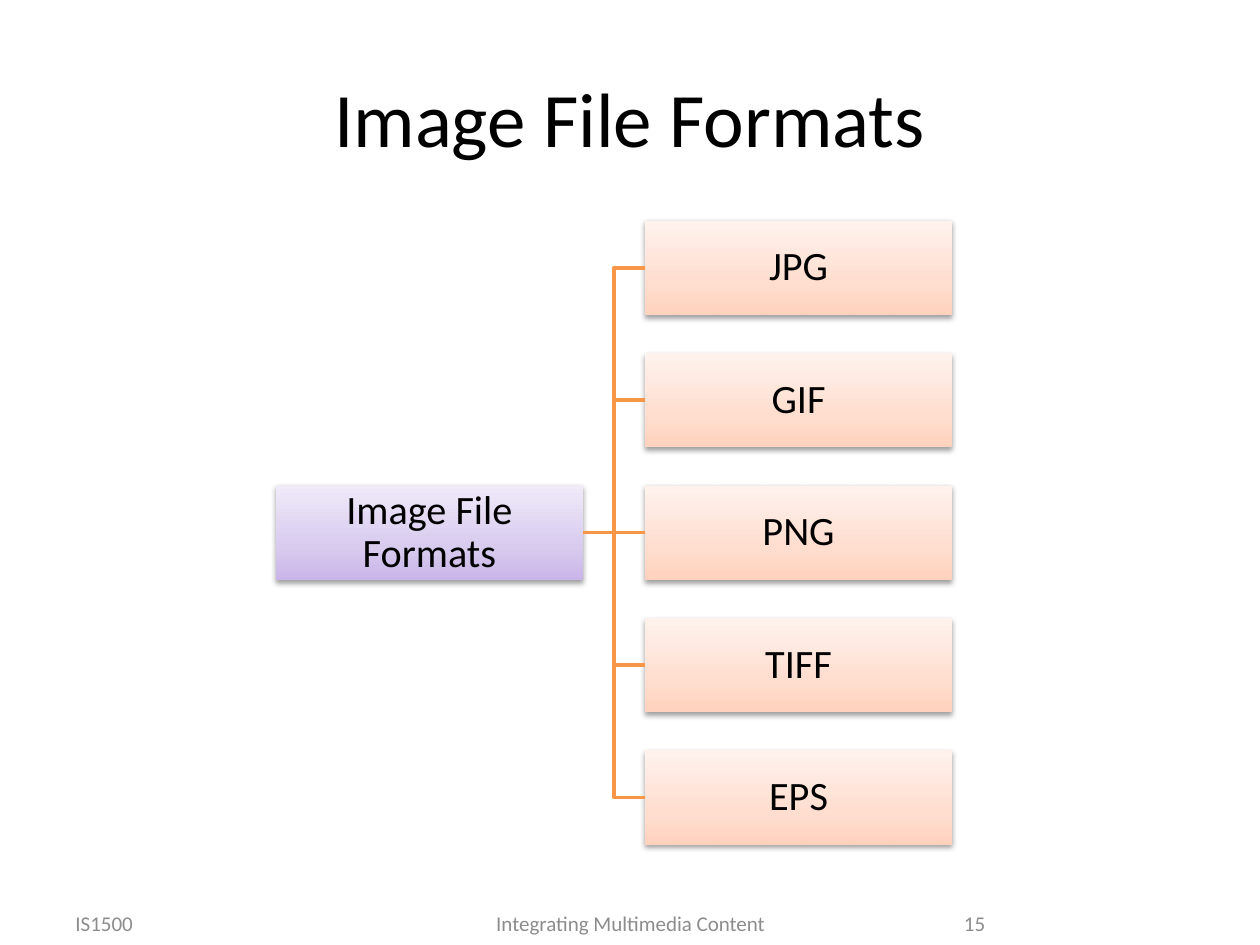
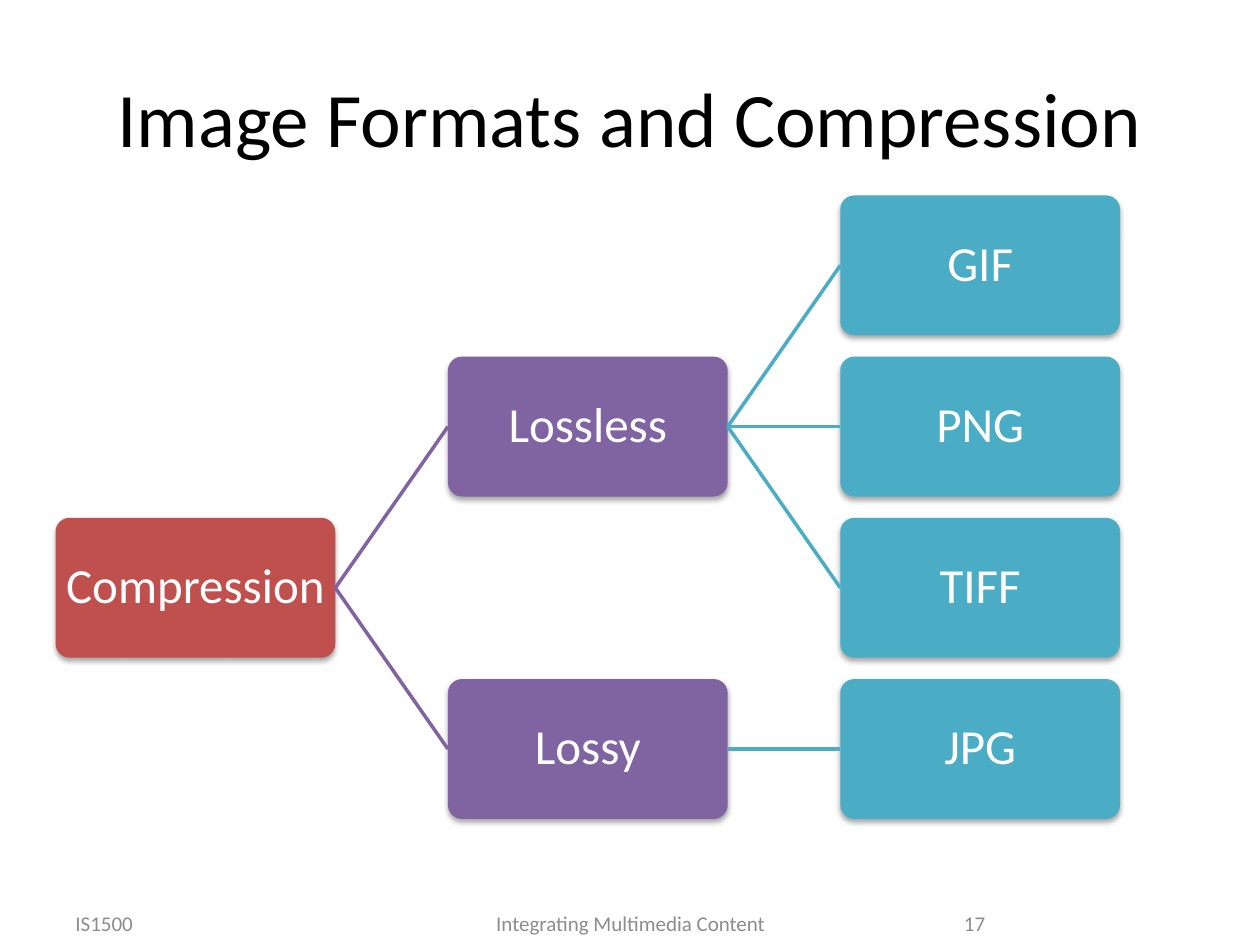
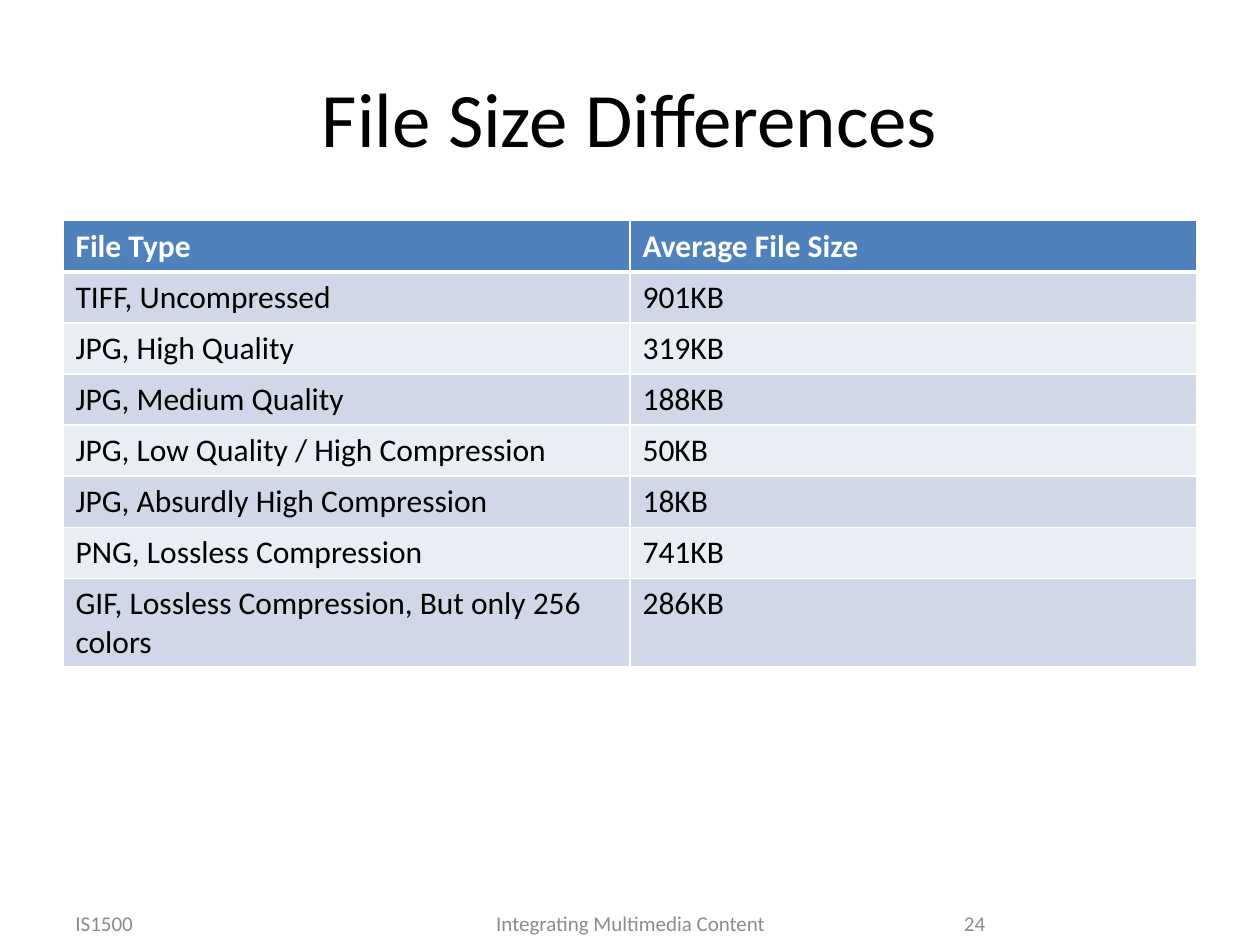
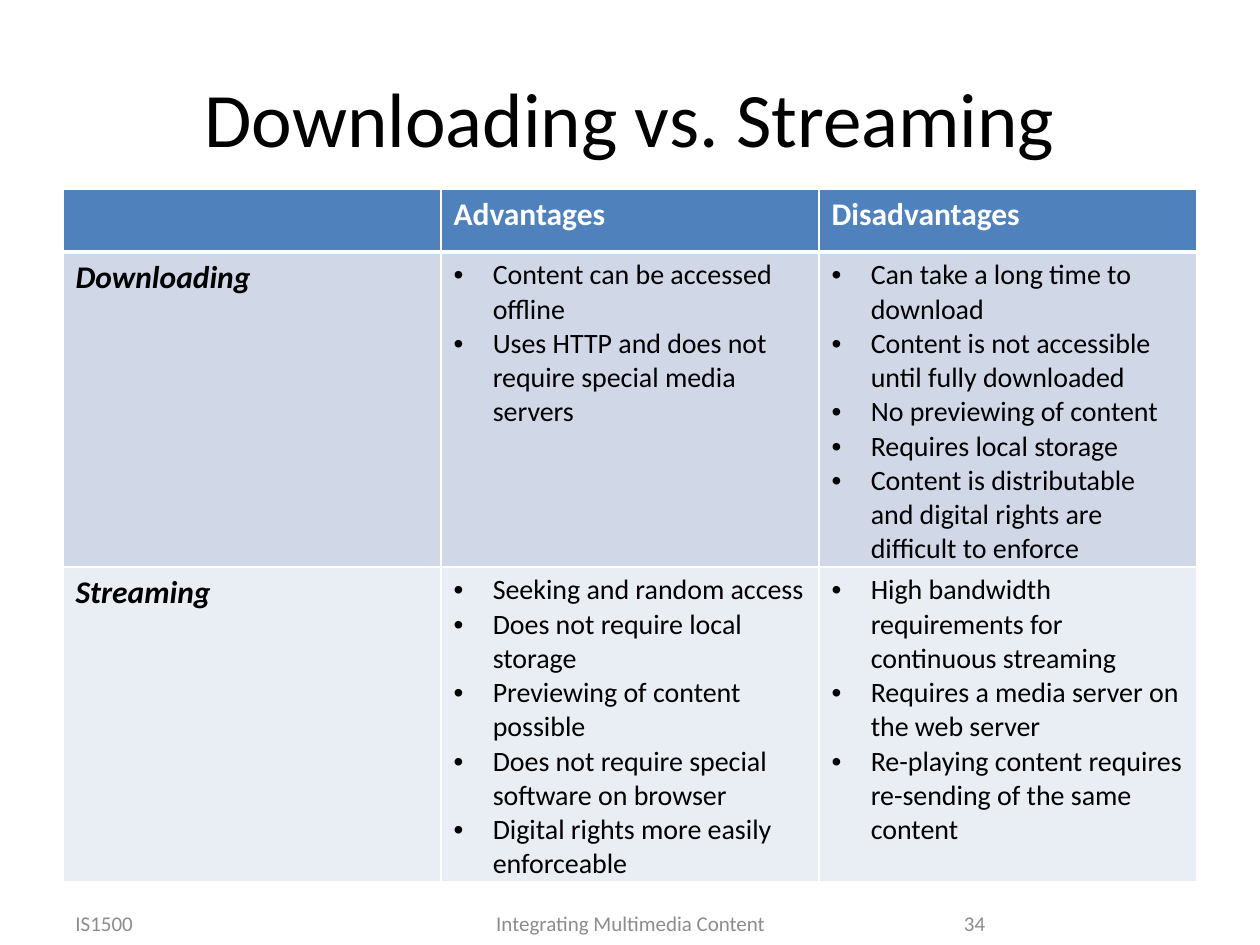
"""Build four slides on image formats, file sizes and media delivery."""
import pptx
import pptx.dml.color
import pptx.enum.shapes
import pptx.enum.text
import pptx.oxml
import pptx.oxml.ns
import pptx.util
from lxml import etree

Cm, Pt = pptx.util.Cm, pptx.util.Pt
SHAPE = pptx.enum.shapes.MSO_SHAPE
LINE = pptx.enum.shapes.MSO_CONNECTOR
ALIGN = pptx.enum.text.PP_ALIGN
ANCHOR = pptx.enum.text.MSO_ANCHOR
qn = pptx.oxml.ns.qn
NS = pptx.oxml.ns.nsdecls("a")

COLORS = {
    "black": "000000", "white": "FFFFFF", "gray": "8C8C8C", "orange": "F79646",
    "red": "C0504D", "purple": "8064A2", "teal": "4BACC6",
    "header": "4F81BD", "band_dark": "D0D8E8", "band_light": "E9EDF4",
}
GRADIENTS = {
    "lilac": [(0, "C9B5E8"), (35, "D8CBEE"), (100, "F0EAF9")],
    "peach": [(0, "FFD2BD"), (35, "FFDED0"), (100, "FFF2ED")],
}
TITLE = {"at": (1.27, 0.76, 22.86, 3.18), "size": 44, "color": "black", "align": ALIGN.CENTER}
FOOTERS = [
    {"at": (1.27, 18.21, 5.92, 0.79), "align": ALIGN.LEFT},
    {"at": (8.69, 18.21, 8.05, 0.79), "align": ALIGN.CENTER},
    {"at": (18.21, 18.21, 1.9, 0.79), "align": ALIGN.RIGHT},
]
FOOTER_TEXTS = ["IS1500", "Integrating Multimedia Content"]

FORMATS_TREE = {
    "shape": SHAPE.RECTANGLE, "connector": LINE.ELBOW, "line": "orange",
    "origin": (5.56, 4.45), "pitch": (7.44, 2.67), "box": (6.2, 1.9),
    "size": 23, "color": "black", "shadow": (38, 20000),
    "nodes": [("Image File Formats", 0, 2, "lilac", None)] + [
        (name, 1, row, "peach", "Image File Formats")
        for row, name in enumerate(["JPG", "GIF", "PNG", "TIFF", "EPS"])],
}
COMPRESSION_TREE = {
    "shape": SHAPE.ROUNDED_RECTANGLE, "connector": LINE.STRAIGHT, "line": None,
    "origin": (1.12, 3.94), "pitch": (7.91, 3.25), "box": (5.64, 2.82),
    "size": 28, "color": "white", "shadow": (35, 23000),
    "nodes": [
        ("Compression", 0, 2, "red", None),
        ("Lossless", 1, 1, "purple", "Compression"),
        ("Lossy", 1, 3, "purple", "Compression"),
        ("GIF", 2, 0, "teal", "Lossless"),
        ("PNG", 2, 1, "teal", "Lossless"),
        ("TIFF", 2, 2, "teal", "Lossless"),
        ("JPG", 2, 3, "teal", "Lossy"),
    ],
}
SIZE_TABLE = {
    "top": 4.45, "heights": [1.03] * 8, "label": {},
    "rows": [
        ("File Type", "Average File Size"),
        ("TIFF, Uncompressed", "901KB"),
        ("JPG, High Quality", "319KB"),
        ("JPG, Medium Quality", "188KB"),
        ("JPG, Low Quality / High Compression", "50KB"),
        ("JPG, Absurdly High Compression", "18KB"),
        ("PNG, Lossless Compression", "741KB"),
        ("GIF, Lossless Compression, But only 256 colors", "286KB"),
    ],
}
DELIVERY_TABLE = {
    "top": 3.81, "heights": [1.27, 4.24, 4.24], "label": {"bold": True, "italic": True},
    "rows": [
        ("", "Advantages", "Disadvantages"),
        ("Downloading",
         ["Content can be accessed offline",
          "Uses HTTP and does not require special media servers"],
         ["Can take a long time to download",
          "Content is not accessible until fully downloaded",
          "No previewing of content",
          "Requires local storage",
          "Content is distributable and digital rights are difficult to enforce"]),
        ("Streaming",
         ["Seeking and random access",
          "Does not require local storage",
          "Previewing of content possible",
          "Does not require special software on browser",
          "Digital rights more easily enforceable"],
         ["High bandwidth requirements for continuous streaming",
          "Requires a media server on the web server",
          "Re-playing content requires re-sending of the same content"]),
    ],
}


def rgb(name):
    return pptx.dml.color.RGBColor.from_string(COLORS[name])


def apply(obj, values):
    for key, value in values.items():
        setattr(obj, key, value)


def write(p, text, size, color, **font):
    r = p.add_run()
    r.text = text
    apply(r.font, {"name": "Calibri", "size": Pt(size), **font})
    r.font.color.rgb = rgb(color)


def add_text(s, text, at, size, color, align):
    tf = s.shapes.add_textbox(*map(Cm, at)).text_frame
    apply(tf, {"word_wrap": True, "vertical_anchor": ANCHOR.MIDDLE})
    p = tf.paragraphs[0]
    p.alignment = align
    write(p, text, size, color)


def fill_box(sp, fill):
    if fill in COLORS:
        sp.fill.solid()
        sp.fill.fore_color.rgb = rgb(fill)
        return
    stops = "".join(f'<a:gs pos="{pos * 1000}"><a:srgbClr val="{color}"/></a:gs>'
                    for pos, color in GRADIENTS[fill])
    sp._element.spPr.insert(2, pptx.oxml.parse_xml(
        f'<a:gradFill {NS} rotWithShape="1"><a:gsLst>{stops}</a:gsLst>'
        '<a:lin ang="16200000" scaled="0"/></a:gradFill>'))


def add_shadow(sp, alpha, dist):
    sp.shadow.inherit = False
    sp._element.spPr.find(qn("a:effectLst")).append(pptx.oxml.parse_xml(
        f'<a:outerShdw {NS} blurRad="40000" dist="{dist}" dir="5400000" rotWithShape="0">'
        f'<a:srgbClr val="{COLORS["black"]}"><a:alpha val="{alpha * 1000}"/></a:srgbClr>'
        '</a:outerShdw>'))


def add_node(s, tree, text, col, row, fill):
    (x, y), (dx, dy) = tree["origin"], tree["pitch"]
    sp = s.shapes.add_shape(tree["shape"], Cm(x + col * dx), Cm(y + row * dy),
                            *map(Cm, tree["box"]))
    if tree["shape"] == SHAPE.ROUNDED_RECTANGLE:
        sp.adjustments[0] = 0.1
    fill_box(sp, fill)
    sp.line.fill.background()
    add_shadow(sp, *tree["shadow"])
    tf = sp.text_frame
    margins = {f"margin_{side}": Cm(0.05) for side in ("left", "top", "right", "bottom")}
    apply(tf, {"word_wrap": True, "vertical_anchor": ANCHOR.MIDDLE, **margins})
    p = tf.paragraphs[0]
    apply(p, {"alignment": ALIGN.CENTER, "line_spacing": 0.9})
    write(p, text, tree["size"], tree["color"])
    return sp


def join(s, parent, child, kind, color):
    x1, y1 = parent.left + parent.width, parent.top + parent.height // 2
    x2, y2 = child.left, child.top + child.height // 2
    line = s.shapes.add_connector(LINE.STRAIGHT if y1 == y2 else kind, x1, y1, x2, y2)
    line.begin_connect(parent, 3)
    line.end_connect(child, 1)
    line.line.width = Pt(2)
    line.line.color.rgb = rgb(color)
    etree.SubElement(line._element.spPr, qn("a:effectLst"))


def add_tree(s, tree):
    boxes = {}
    for text, col, row, fill, parent in tree["nodes"]:
        boxes[text] = add_node(s, tree, text, col, row, fill)
        if parent:
            join(s, boxes[parent], boxes[text], tree["connector"], tree["line"] or fill)


def add_borders(cell, row):
    widths = {"L": 1, "R": 1, "T": 3 if row == 1 else 1, "B": 3 if row == 0 else 1}
    for side, width in widths.items():
        cell._tc.get_or_add_tcPr().append(pptx.oxml.parse_xml(
            f'<a:ln{side} {NS} w="{Pt(width)}"><a:solidFill>'
            f'<a:srgbClr val="{COLORS["white"]}"/></a:solidFill></a:ln{side}>'))


def add_bullets(tf, items):
    for i, item in enumerate(items):
        p = tf.add_paragraph() if i else tf.paragraphs[0]
        pPr = p._p.get_or_add_pPr()
        pPr.set("marL", str(Cm(0.79)))
        pPr.set("indent", str(-Cm(0.79)))
        etree.SubElement(pPr, qn("a:buFont"), typeface="Arial")
        etree.SubElement(pPr, qn("a:buChar"), char="•")
        write(p, item, 16, "black")


def add_grid(s, grid):
    rows, heights = grid["rows"], grid["heights"]
    count = len(rows[0])
    table = s.shapes.add_table(len(rows), count, Cm(1.27), Cm(grid["top"]),
                               Cm(22.86), Cm(sum(heights))).table
    for column in table.columns:
        column.width = Cm(22.86 / count)
    for i, (values, height) in enumerate(zip(rows, heights)):
        table.rows[i].height = Cm(height)
        band = "header" if i == 0 else "band_dark" if i % 2 else "band_light"
        for j, value in enumerate(values):
            cell = table.cell(i, j)
            add_borders(cell, i)
            cell.fill.solid()
            cell.fill.fore_color.rgb = rgb(band)
            p = cell.text_frame.paragraphs[0]
            if isinstance(value, list):
                add_bullets(cell.text_frame, value)
            elif value and i == 0:
                write(p, value, 18, "white", bold=True)
            elif value:
                write(p, value, 18, "black", **(grid["label"] if j == 0 else {}))


SLIDES = [
    ("Image File Formats", "15", add_tree, FORMATS_TREE),
    ("Image Formats and Compression", "17", add_tree, COMPRESSION_TREE),
    ("File Size Differences", "24", add_grid, SIZE_TABLE),
    ("Downloading vs. Streaming", "34", add_grid, DELIVERY_TABLE),
]


def main():
    prs = pptx.Presentation()
    apply(prs, {"slide_width": Cm(25.4), "slide_height": Cm(19.05)})
    for title, number, draw, content in SLIDES:
        s = prs.slides.add_slide(prs.slide_layouts[6])
        add_text(s, title, **TITLE)
        draw(s, content)
        for text, footer in zip(FOOTER_TEXTS + [number], FOOTERS):
            add_text(s, text, size=12, color="gray", **footer)
    prs.save("out.pptx")


if __name__ == "__main__":
    main()
